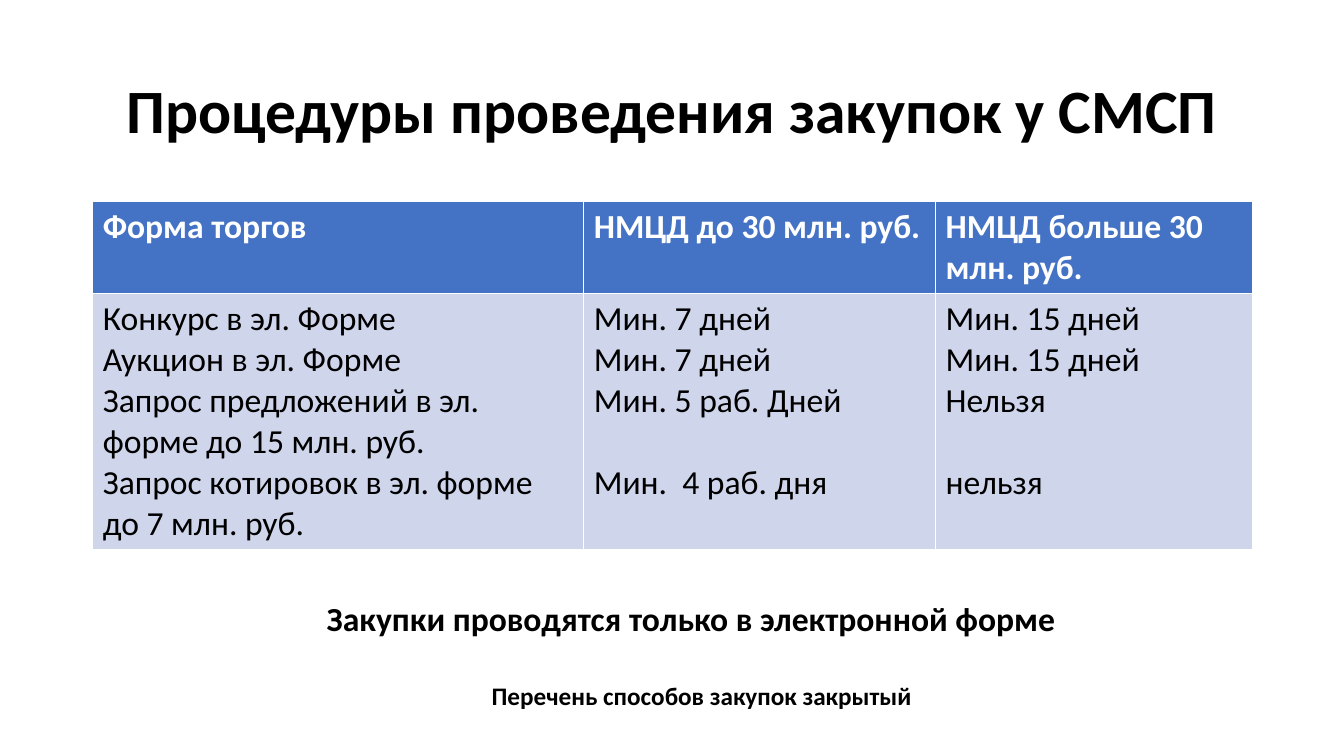
"""Build a slide on procurement procedures with a table of minimum terms."""
from pptx import Presentation
from pptx.dml.color import RGBColor
from pptx.enum.text import MSO_ANCHOR, MSO_AUTO_SIZE, PP_ALIGN
from pptx.util import Inches, Pt

CENTER = PP_ALIGN.CENTER
MIDDLE = MSO_ANCHOR.MIDDLE
NO_AUTOFIT = MSO_AUTO_SIZE.NONE
FONT = "Calibri"
TABLE_SIZE = 24
SKIPPED_LINE = Pt(29.3)
COLORS = {"text": "000000", "header_text": "FFFFFF", "header": "4472C4", "body": "CFD5EA"}


def add_run(paragraph, text, size, color="text", bold=True):
    run = paragraph.add_run()
    run.text = text
    run.font.name = FONT
    run.font.size = Pt(size)
    run.font.bold = bold
    run.font.color.rgb = RGBColor.from_string(COLORS[color])


presentation = Presentation()
presentation.slide_width = Inches(13.33)
presentation.slide_height = Inches(7.5)
slide = presentation.slides.add_slide(presentation.slide_layouts[5])

title = slide.shapes.title
title.left, title.top = Inches(0.92), Inches(0.4)
title.width, title.height = Inches(11.5), Inches(1.45)
title.text_frame.auto_size = NO_AUTOFIT
title.text_frame.vertical_anchor = MIDDLE
title_paragraph = title.text_frame.paragraphs[0]
title_paragraph.alignment = CENTER
title_paragraph.line_spacing = 0.9
add_run(title_paragraph, "Процедуры проведения закупок у СМСП", 44)

columns = [
    (4.87, "Форма торгов", [
        "Конкурс в эл. Форме",
        "Аукцион в эл. Форме",
        "Запрос предложений в эл. форме до 15 млн. руб.",
        "Запрос котировок в эл. форме до 7 млн. руб.",
    ]),
    (3.49, "НМЦД до 30 млн. руб.", [
        "Мин. 7 дней", "Мин. 7 дней", "Мин. 5 раб. Дней", "Мин.  4 раб. дня",
    ]),
    (3.14, "НМЦД больше 30 млн. руб.", [
        "Мин. 15 дней", "Мин. 15 дней", "Нельзя", "нельзя",
    ]),
]
table = slide.shapes.add_table(
    2, len(columns), Inches(0.92), Inches(2), Inches(11.5), Inches(3.45)
).table
table.rows[0].height = Inches(0.91)
table.rows[1].height = Inches(2.54)

for column_index, (width, heading, terms) in enumerate(columns):
    table.columns[column_index].width = Inches(width)

    header_cell = table.cell(0, column_index)
    header_cell.fill.solid()
    header_cell.fill.fore_color.rgb = RGBColor.from_string(COLORS["header"])
    add_run(header_cell.text_frame.paragraphs[0], heading, TABLE_SIZE, "header_text")

    body_cell = table.cell(1, column_index)
    body_cell.fill.solid()
    body_cell.fill.fore_color.rgb = RGBColor.from_string(COLORS["body"])
    text_frame = body_cell.text_frame
    for term_index, term in enumerate(terms):
        paragraph = text_frame.add_paragraph() if term_index else text_frame.paragraphs[0]
        add_run(paragraph, term, TABLE_SIZE, bold=False)
    if column_index > 0:
        paragraph.space_before = SKIPPED_LINE

notes = [
    (1.57, 5.88, 10.57, 0.5, "Закупки проводятся только в электронной форме", 24),
    (2.29, 6.7, 9.34, 0.4, "Перечень способов закупок закрытый", 18),
]
for left, top, width, height, text, size in notes:
    note = slide.shapes.add_textbox(Inches(left), Inches(top), Inches(width), Inches(height))
    note.text_frame.word_wrap = True
    note_paragraph = note.text_frame.paragraphs[0]
    note_paragraph.alignment = CENTER
    add_run(note_paragraph, text, size)

presentation.save("out.pptx")
